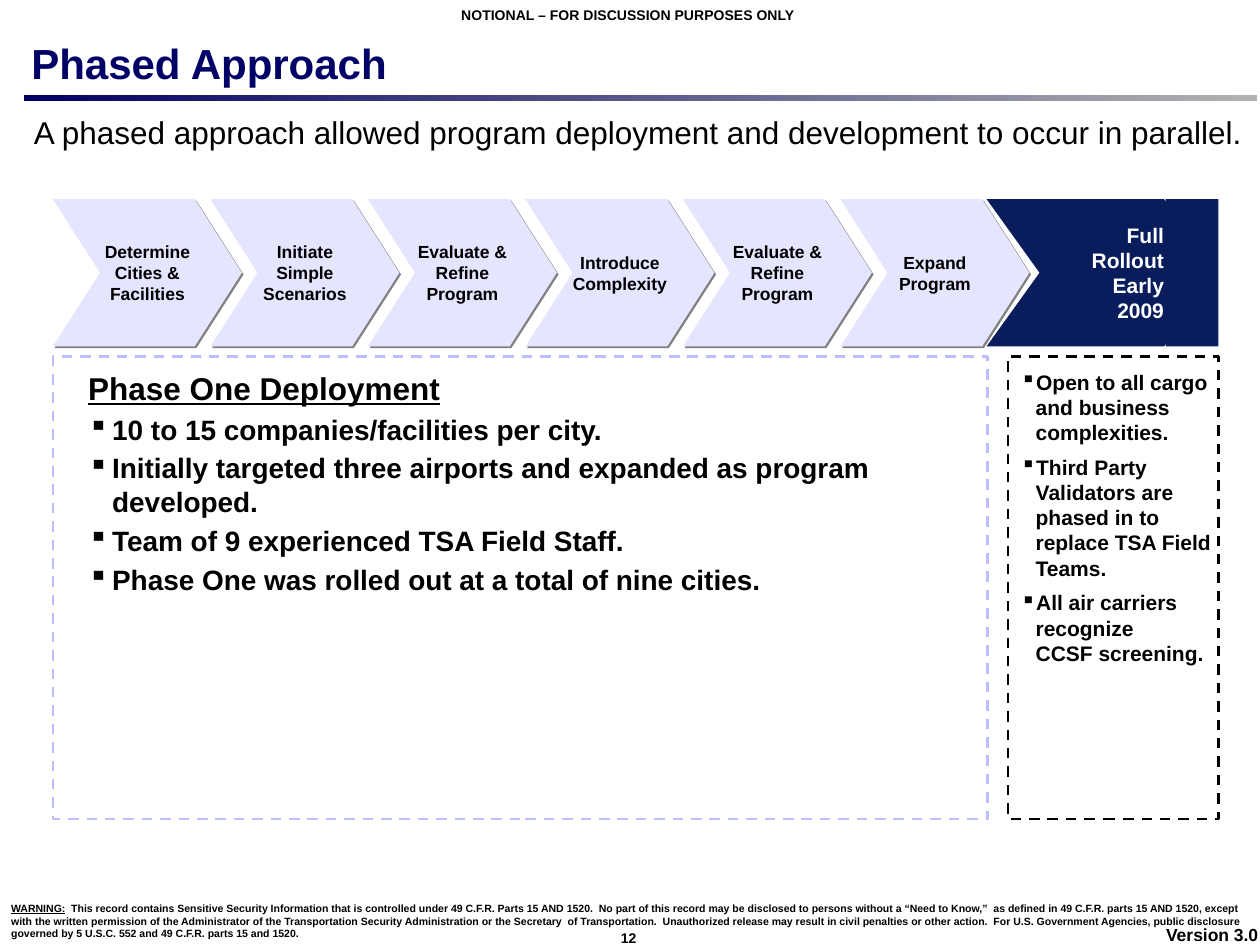
from dataclasses import dataclass

from lxml import etree
from pptx import Presentation
from pptx.dml.color import RGBColor
from pptx.enum.dml import MSO_LINE
from pptx.enum.shapes import MSO_SHAPE
from pptx.enum.text import MSO_ANCHOR, PP_ALIGN
from pptx.oxml import parse_xml
from pptx.oxml.ns import nsdecls, qn
from pptx.util import Inches, Pt


@dataclass(frozen=True)
class Theme:
    font: str = "Arial"
    black: str = "000000"
    white: str = "FFFFFF"
    title: str = "000066"
    rule_end: str = "B2B2B2"
    step: str = "E5E5FF"
    rollout: str = "091D5D"
    panel: str = "BDBDFF"
    shadow: str = "808080"
    title_size: int = 24
    lead_size: int = 18
    list_size: int = 16
    side_size: int = 12
    step_size: int = 10
    note_size: int = 8
    warning_size: int = 6


T = Theme()
INSETS = (0.1, 0.05, 0.1, 0.05)


class SlideBuilder:
    def __init__(self, slide, theme):
        self.s = slide
        self.t = theme

    def style(self, p, size, color, bold=True, underline=False):
        for r in p.runs:
            r.font.name = self.t.font
            r.font.size = Pt(size)
            r.font.bold = bold
            r.font.underline = underline
            r.font.color.rgb = RGBColor.from_string(color)

    def frame(self, shape, insets=INSETS, anchor=MSO_ANCHOR.TOP, wrap=True):
        tf = shape.text_frame
        tf.word_wrap = wrap
        tf.vertical_anchor = anchor
        (tf.margin_left, tf.margin_top,
         tf.margin_right, tf.margin_bottom) = map(Inches, insets)
        return tf

    def fill_text(self, tf, text, size, color, align, bold=True):
        tf.text = text
        for p in tf.paragraphs:
            p.alignment = align
            self.style(p, size, color, bold)

    def text(self, box, text, size, color=T.black, bold=True,
             align=PP_ALIGN.LEFT, **frame):
        tb = self.s.shapes.add_textbox(*map(Inches, box))
        tf = self.frame(tb, **frame)
        self.fill_text(tf, text, size, color, align, bold)
        return tf

    def shape(self, kind, box, fill=None):
        sp = self.s.shapes.add_shape(kind, *map(Inches, box))
        sp.shadow.inherit = False
        sp.line.fill.background()
        if fill:
            sp.fill.solid()
            sp.fill.fore_color.rgb = RGBColor.from_string(fill)
        else:
            sp.fill.background()
        return sp

    def rule(self, box, start, end):
        sp = self.shape(MSO_SHAPE.RECTANGLE, box)
        sp.fill.gradient()
        sp.fill.gradient_angle = 0
        for stop, color in zip(sp.fill.gradient_stops, (start, end)):
            stop.color.rgb = RGBColor.from_string(color)

    def chevron(self, box, text, fill, color, size, adj, align, inset=0):
        sp = self.shape(MSO_SHAPE.CHEVRON, box, fill)
        sp.adjustments[0] = adj
        tf = self.frame(sp, (inset, 0, 0, 0), MSO_ANCHOR.MIDDLE)
        self.fill_text(tf, text, size, color, align)
        return sp

    def drop_shadow(self, sp):
        effects = sp._element.spPr.find(qn("a:effectLst"))
        effects.append(parse_xml(
            f'<a:outerShdw {nsdecls("a")} dist="17780" dir="2700000" '
            f'algn="ctr" rotWithShape="0">'
            f'<a:srgbClr val="{self.t.shadow}"/></a:outerShdw>'))

    def panel(self, box, line):
        sp = self.shape(MSO_SHAPE.RECTANGLE, box)
        sp.line.color.rgb = RGBColor.from_string(line)
        sp.line.width = Pt(1.5)
        sp.line.dash_style = MSO_LINE.DASH
        return self.frame(sp, (0.03, 0.1, 0.03, 0.1), MSO_ANCHOR.TOP)

    def item(self, tf, text, size, left, hang, before=0, after=0,
             bullet=True, underline=False):
        first = not tf.text
        p = tf.paragraphs[0] if first else tf.add_paragraph()
        p.text = text
        pPr = p._p.get_or_add_pPr()
        pPr.set("marL", str(Inches(left)))
        pPr.set("indent", str(-Inches(hang)))
        if bullet:
            etree.SubElement(pPr, qn("a:buChar")).set("char", "▪")
        p.alignment = PP_ALIGN.LEFT
        p.space_before = Pt(0 if first else before)
        p.space_after = Pt(after)
        self.style(p, size, self.t.black, underline=underline)


STEPS = [
    "Determine Cities &\nFacilities",
    "Initiate\vSimple Scenarios",
    "Evaluate &\nRefine\vProgram",
    "Introduce Complexity",
    "Evaluate & Refine Program",
    "Expand Program",
]
PHASE_ONE = [
    "10 to 15 companies/facilities per city.",
    "Initially targeted three airports and expanded as program developed.",
    "Team of 9 experienced TSA Field Staff.",
    "Phase One was rolled out at a total of nine cities.",
]
ROLLOUT = [
    "Open to all cargo \vand business\vcomplexities.",
    "Third Party Validators are phased in to replace TSA Field Teams.",
    "All air carriers recognize \vCCSF screening.",
]
WARNING = (
    "  This record contains Sensitive Security Information that is controlled "
    "under 49 C.F.R. Parts 15 AND 1520.  No part of this record may be "
    "disclosed to persons without a “Need to Know,”  as defined in 49 C.F.R. "
    "parts 15 AND 1520, except with the written permission of the "
    "Administrator of the Transportation Security Administration or the "
    "Secretary  of Transportation.  Unauthorized release may result in civil "
    "penalties or other action.  For U.S. Government Agencies, public "
    "disclosure governed by 5 U.S.C. 552 and 49 C.F.R. parts 15 and 1520.")


def main():
    prs = Presentation()
    prs.slide_width, prs.slide_height = Inches(10), Inches(7.5)
    b = SlideBuilder(prs.slides.add_slide(prs.slide_layouts[6]), T)

    # Header and footer
    b.rule((0.19, 0.75, 9.79, 0.05), T.title, T.rule_end)
    b.text((4.83, 7.33, 0.34, 0.23), "12", T.note_size, wrap=False)
    b.text((0.14, 0, 9.69, 0.23), "NOTIONAL – FOR DISCUSSION PURPOSES ONLY",
           T.note_size, align=PP_ALIGN.CENTER)
    b.text((9.24, 7.33, 0.76, 0.17), "Version 3.0", T.step_size,
           align=PP_ALIGN.CENTER, insets=(0, 0, 0, 0), wrap=False)
    tf = b.text((-0.01, 7.11, 10.09, 0.4), "WARNING:", T.warning_size)
    p = tf.paragraphs[0]
    p.add_run().text = WARNING
    b.style(p, T.warning_size, T.black)
    p.runs[0].font.underline = True

    # Title and lead sentence
    b.text((0.15, 0.25, 9.85, 0.5), "Phased Approach", T.title_size, T.title,
           anchor=MSO_ANCHOR.BOTTOM)
    b.text((0.17, 0.85, 9.83, 0.4),
           "A phased approach allowed program deployment and development "
           "to occur in parallel.", T.lead_size, bold=False)

    # Process steps
    for i, step in enumerate(STEPS):
        sp = b.chevron((0.42 + 1.25 * i, 1.58, 1.5, 1.17), step, T.step,
                       T.black, T.step_size, 0.32, PP_ALIGN.CENTER)
        b.drop_shadow(sp)

    # Phase one panel
    tf = b.panel((0.42, 2.83, 7.42, 3.67), T.panel)
    b.item(tf, "Phase One Deployment", T.lead_size, 0.44, 0.19, after=3,
           bullet=False, underline=True)
    for line in PHASE_ONE:
        b.item(tf, line, T.list_size, 0.44, 0.19, after=3)

    # Full rollout panel
    tf = b.panel((8, 2.83, 1.67, 3.67), T.black)
    for line in ROLLOUT:
        b.item(tf, line, T.side_size, 0.19, 0.12, before=2, after=3.5)

    # Full rollout arrow with a squared end
    b.shape(MSO_SHAPE.RECTANGLE, (9.25, 1.58, 0.42, 1.17), T.rollout)
    b.chevron((7.83, 1.58, 1.83, 1.17), "Full Rollout\nEarly 2009", T.rollout,
              T.white, T.side_size, 0.36, PP_ALIGN.RIGHT, inset=0.3)

    prs.save("out.pptx")


if __name__ == "__main__":
    main()
